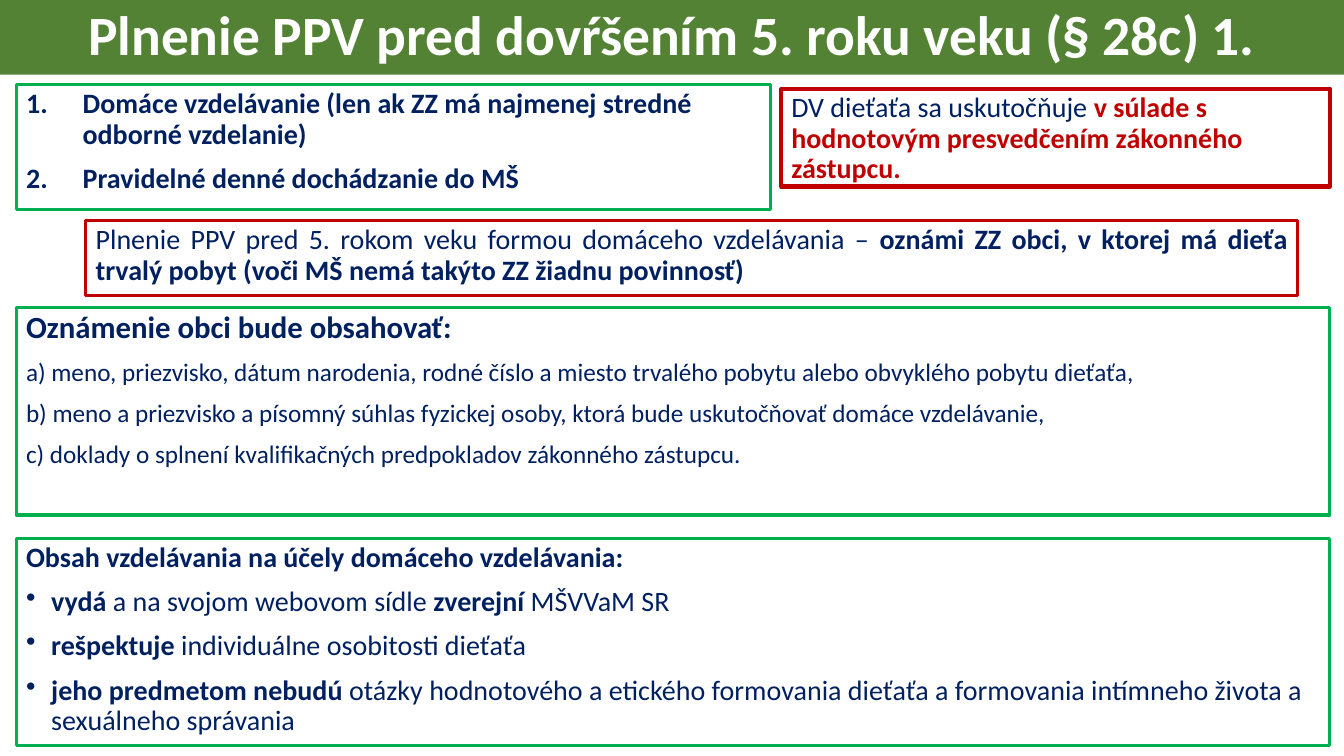
"""Build the slide on early home education before the age of five."""
from dataclasses import dataclass

from lxml import etree
from pptx import Presentation
from pptx.dml.color import RGBColor
from pptx.enum.text import MSO_ANCHOR, MSO_AUTO_SIZE, PP_ALIGN
from pptx.oxml.ns import qn
from pptx.util import Inches, Pt

LEFT, CENTER, JUSTIFY = PP_ALIGN.LEFT, PP_ALIGN.CENTER, PP_ALIGN.JUSTIFY
TOP, MIDDLE = MSO_ANCHOR.TOP, MSO_ANCHOR.MIDDLE
FIXED = MSO_AUTO_SIZE.NONE


@dataclass(frozen=True)
class Theme:
    font: str = "Calibri"
    white: str = "FFFFFF"
    navy: str = "002060"
    olive: str = "548235"
    green: str = "00B050"
    red: str = "C00000"
    title: float = 39.6
    head: float = 22
    text: float = 20
    small: float = 18
    gap: float = 10
    lead: float = 0.9


class Deck:
    def __init__(self, theme):
        self.theme = theme
        self.prs = Presentation()
        self.prs.slide_width = Inches(13.33)
        self.prs.slide_height = Inches(7.5)
        self.slide = self.prs.slides.add_slide(self.prs.slide_layouts[1])

    def place(self, shape, area):
        shape.left, shape.top, shape.width, shape.height = map(Inches, area)

    def frame(self, shape, anchor=TOP):
        frame = shape.text_frame
        frame.word_wrap = True
        frame.auto_size = FIXED
        frame.vertical_anchor = anchor
        return frame

    def mark(self, para, tag, indent, **attrs):
        props = para._p.get_or_add_pPr()
        props.set("marL", str(Inches(indent)))
        props.set("indent", str(Inches(-indent)))
        etree.SubElement(props, qn(tag), **attrs)

    def add_runs(self, para, runs, size, align=LEFT, gap=0):
        para.alignment = align
        para.line_spacing = self.theme.lead
        para.space_before = Pt(gap)
        for text, bold, color in runs:
            run = para.add_run()
            run.text = text
            run.font.name = self.theme.font
            run.font.size = Pt(size)
            run.font.bold = bold
            run.font.color.rgb = RGBColor.from_string(color)

    def title(self, text, area):
        shape = self.slide.shapes.title
        self.place(shape, area)
        shape.fill.solid()
        shape.fill.fore_color.rgb = RGBColor.from_string(self.theme.olive)
        para = self.frame(shape, MIDDLE).paragraphs[0]
        self.add_runs(para, [(text, True, self.theme.white)], self.theme.title, CENTER)

    def fill(self, shape, edge, width, items, align=LEFT):
        shape.line.color.rgb = RGBColor.from_string(edge)
        shape.line.width = Pt(width)
        frame = self.frame(shape)
        for i, (kind, size, runs) in enumerate(items):
            para = frame.add_paragraph() if i else frame.paragraphs[0]
            if kind == "number":
                self.mark(para, "a:buAutoNum", 0.56, type="arabicPeriod")
            elif kind == "bullet":
                self.mark(para, "a:buChar", 0.25, char="•")
            self.add_runs(para, runs, size, align, self.theme.gap if i else 0)

    def body(self, area, edge, items):
        shape = self.slide.placeholders[1]
        self.place(shape, area)
        self.fill(shape, edge, 2.25, items)

    def box(self, area, edge, items, width=2.25, align=LEFT):
        shape = self.slide.shapes.add_textbox(*map(Inches, area))
        self.fill(shape, edge, width, items, align)

    def save(self):
        self.prs.save("out.pptx")


def main():
    t = Theme()
    deck = Deck(t)

    def bold(text):
        return text, True, t.navy

    def plain(text):
        return text, False, t.navy

    deck.title("Plnenie PPV pred dovŕšením 5. roku veku (§ 28c) 1.", (0, 0, 13.33, 0.74))

    ways = [
        "Domáce vzdelávanie (len ak ZZ má najmenej stredné odborné vzdelanie)",
        "Pravidelné denné dochádzanie do MŠ",
    ]
    deck.body((0.16, 0.84, 7.48, 1.24), t.green,
              [("number", t.text, [bold(way)]) for way in ways])

    deck.box((0.85, 2.19, 12.02, 0.74), t.red, [("plain", t.text, [
        plain("Plnenie PPV pred 5. rokom veku formou domáceho vzdelávania –"),
        bold(" oznámi ZZ obci, v ktorej má dieťa trvalý pobyt "
             "(voči MŠ nemá takýto ZZ žiadnu povinnosť)"),
    ])], align=JUSTIFY)

    parts = [
        "a) meno, priezvisko, dátum narodenia, rodné číslo a miesto trvalého pobytu "
        "alebo obvyklého pobytu dieťaťa,",
        "b) meno a priezvisko a písomný súhlas fyzickej osoby, ktorá bude "
        "uskutočňovať domáce vzdelávanie,",
        "c) doklady o splnení kvalifikačných predpokladov zákonného zástupcu.",
    ]
    deck.box((0.16, 3.05, 13.03, 2.06), t.green,
             [("plain", t.head, [bold("Oznámenie obci bude obsahovať:")])]
             + [("plain", t.small, [plain(part)]) for part in parts])

    rules = [
        [bold("vydá"), plain(" a na svojom webovom sídle "),
         bold("zverejní "), plain("MŠVVaM SR")],
        [bold("rešpektuje"), plain(" individuálne osobitosti dieťaťa")],
        [bold("jeho predmetom nebudú "),
         plain("otázky hodnotového a etického formovania dieťaťa "
               "a formovania intímneho života a sexuálneho správania")],
    ]
    deck.box((0.16, 5.34, 13.03, 2.06), t.green,
             [("plain", t.text, [bold("Obsah vzdelávania na účely domáceho vzdelávania:")])]
             + [("bullet", t.text, rule) for rule in rules])

    deck.box((7.75, 0.88, 5.44, 0.97), t.red, [("plain", t.text, [
        plain("DV dieťaťa sa uskutočňuje "),
        ("v súlade s hodnotovým presvedčením zákonného zástupcu.", True, t.red),
    ])], width=3)

    deck.save()


if __name__ == "__main__":
    main()
